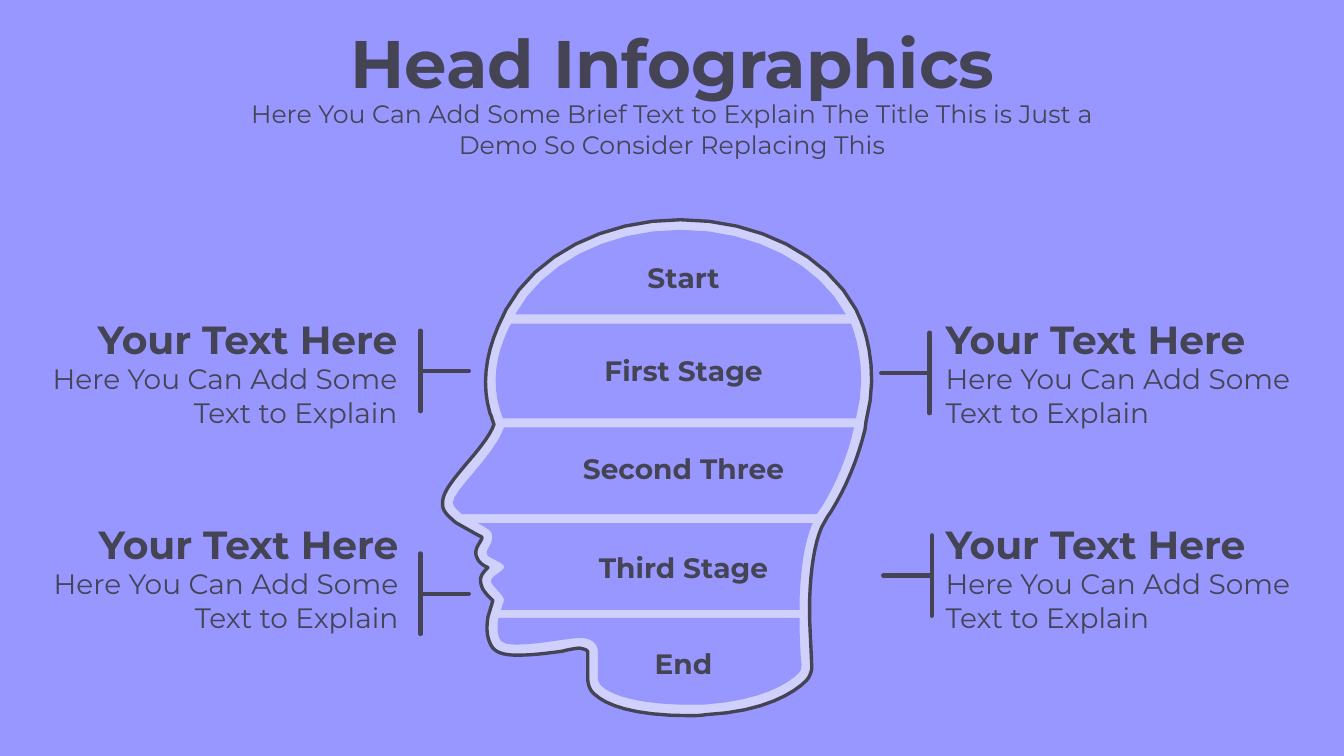
import pptx
import pptx.dml.color
import pptx.enum.shapes
import pptx.enum.text
import pptx.oxml.ns
import pptx.util
from lxml import etree

PERIWINKLE = pptx.dml.color.RGBColor(0x97, 0x97, 0xFF)
LAVENDER = pptx.dml.color.RGBColor(0xD0, 0xD0, 0xFC)
SLATE = pptx.dml.color.RGBColor(0x44, 0x44, 0x54)
FONT = "Montserrat"
LEFT = pptx.enum.text.PP_ALIGN.LEFT
CENTER = pptx.enum.text.PP_ALIGN.CENTER
RIGHT = pptx.enum.text.PP_ALIGN.RIGHT

COLUMNS, ROWS = 13.33, 7.5
CELL = pptx.util.Inches(1)
CURVE_STEPS = 8

# Outlines: a start point, then line ends (x, y) or cubic curves (x1, y1, x2, y2, x, y)
HEAD = [
    (6.84, 7.1), (6.27, 7.1, 6.01, 6.99, 5.9, 6.89), (5.85, 6.85, 5.83, 6.79, 5.83, 6.73),
    (5.83, 6.47), (5.83, 6.45, 5.8, 6.44, 5.75, 6.43), (5.73, 6.43, 5.65, 6.44, 5.58, 6.46),
    (5.44, 6.48, 5.27, 6.5, 5.13, 6.5), (5.05, 6.5, 4.94, 6.49, 4.89, 6.43),
    (4.83, 6.35, 4.82, 6.25, 4.84, 6.12), (4.87, 6.02), (4.88, 6, 4.88, 5.97, 4.89, 5.96),
    (4.88, 5.95, 4.86, 5.93, 4.85, 5.92), (4.81, 5.88, 4.78, 5.84, 4.77, 5.79),
    (4.75, 5.72, 4.8, 5.67, 4.84, 5.63), (4.79, 5.61, 4.75, 5.58, 4.73, 5.53),
    (4.7, 5.47, 4.74, 5.41, 4.76, 5.38), (4.77, 5.36, 4.78, 5.35, 4.78, 5.33),
    (4.77, 5.32, 4.74, 5.31, 4.69, 5.28), (4.53, 5.19),
    (4.5, 5.17, 4.47, 5.14, 4.44, 5.11), (4.41, 5.08, 4.39, 5.04, 4.39, 5.01),
    (4.38, 4.91, 4.45, 4.81, 4.61, 4.62), (4.72, 4.49, 4.86, 4.33, 4.9, 4.21),
    (4.89, 4.19, 4.89, 4.17, 4.88, 4.16), (4.88, 4.14, 4.87, 4.12, 4.86, 4.1),
    (4.78, 3.83, 4.81, 3.54, 4.94, 3.24), (5.02, 3.07),
    (5.31, 2.53, 5.99, 2.18, 6.75, 2.18), (7.52, 2.18, 8.2, 2.53, 8.49, 3.07),
    (8.53, 3.16), (8.54, 3.18, 8.74, 3.62, 8.59, 4.18), (8.58, 4.26),
    (8.51, 4.55, 8.39, 4.84, 8.24, 5.08), (8.22, 5.11, 8.21, 5.12, 8.2, 5.14),
    (8.15, 5.23), (8.08, 5.39, 8.04, 5.64, 8.03, 5.96), (8.03, 6.13),
    (8.04, 6.37, 8.05, 6.55, 8.05, 6.58), (8.06, 6.64, 8.04, 6.7, 8, 6.75),
    (7.88, 6.87, 7.59, 7.06, 7, 7.09), (6.94, 7.1, 6.89, 7.1, 6.84, 7.1),
]

# Label, top of the label, outline of the band
STAGES = [
    ("Start", 2.54, [
        (8.39, 3.12), (5.11, 3.12), (5.37, 2.63, 6.01, 2.28, 6.75, 2.28),
        (7.5, 2.28, 8.13, 2.63, 8.39, 3.12)]),
    ("First Stage", 3.46, [
        (8.49, 4.15), (4.99, 4.15), (4.98, 4.13, 4.97, 4.1, 4.96, 4.07),
        (4.87, 3.78, 4.93, 3.51, 5.03, 3.29), (5.07, 3.21), (8.44, 3.21),
        (8.44, 3.21, 8.63, 3.63, 8.49, 4.15)]),
    ("Second Three", 4.43, [
        (8.47, 4.24), (8.41, 4.53, 8.28, 4.82, 8.15, 5.03), (8.1, 5.1), (4.58, 5.1),
        (4.56, 5.08, 4.53, 5.06, 4.52, 5.04), (4.5, 5.03, 4.5, 5.01, 4.49, 4.99),
        (4.48, 4.88, 4.91, 4.51, 5, 4.24)]),
    ("Third Stage", 5.41, [
        (8.06, 5.19), (7.97, 5.39, 7.94, 5.68, 7.93, 5.96), (7.93, 6.05), (4.97, 6.05),
        (4.98, 6.01, 4.99, 5.98, 5, 5.96), (5, 5.9, 4.88, 5.82, 4.87, 5.77),
        (4.86, 5.72, 4.99, 5.67, 5, 5.63), (5.01, 5.58, 4.84, 5.54, 4.83, 5.5),
        (4.81, 5.45, 4.9, 5.39, 4.88, 5.3), (4.87, 5.26, 4.81, 5.23, 4.74, 5.19)]),
    ("End", 6.36, [
        (4.95, 6.13), (7.93, 6.13), (7.93, 6.34, 7.94, 6.52, 7.95, 6.59),
        (7.95, 6.63, 7.94, 6.66, 7.92, 6.68), (7.83, 6.77, 7.57, 6.95, 6.99, 6.99),
        (6.3, 7.01, 6.05, 6.88, 5.97, 6.81), (5.95, 6.79, 5.93, 6.76, 5.93, 6.73),
        (5.93, 6.47), (5.93, 6.38, 5.86, 6.33, 5.76, 6.33),
        (5.65, 6.32, 5.05, 6.46, 4.97, 6.36), (4.93, 6.31, 4.93, 6.22, 4.94, 6.14)]),
]

# Text left and top, alignment, bracket x and y, direction of its stem
CALLOUTS = [
    (0.17, 3.08, RIGHT, 4.17, 3.68, 1),
    (9.28, 3.08, LEFT, 9.22, 3.7, -1),
    (0.18, 5.11, RIGHT, 4.17, 5.89, 1),
    (9.28, 5.11, LEFT, 9.24, 5.71, -1),
]


def grid(*cells):
    return [round(n * CELL) for n in cells]


def add_text(shapes, text, box, size, align, bold=False):
    s = shapes.add_textbox(*grid(*box))
    tf = s.text_frame
    tf.word_wrap = True
    tf.auto_size = pptx.enum.text.MSO_AUTO_SIZE.SHAPE_TO_FIT_TEXT
    tf.text = text
    p = tf.paragraphs[0]
    p.alignment = align
    r = p.runs[0]
    r.font.name = FONT
    r.font.size = pptx.util.Pt(size)
    r.font.bold = bold
    r.font.color.rgb = SLATE


def flatten(outline):
    """Turn lines and cubic curves into one list of points."""
    points = [outline[0]]
    for segment in outline[1:]:
        if len(segment) == 2:
            points.append(segment)
            continue
        x0, y0 = points[-1]
        x1, y1, x2, y2, x3, y3 = segment
        for step in range(1, CURVE_STEPS + 1):
            t = step / CURVE_STEPS
            a, b, c, d = (1 - t) ** 3, 3 * t * (1 - t) ** 2, 3 * t * t * (1 - t), t ** 3
            points.append((a * x0 + b * x1 + c * x2 + d * x3,
                           a * y0 + b * y1 + c * y2 + d * y3))
    return points


def add_outline(shapes, outline, fill, line=None):
    points = [grid(*point) for point in flatten(outline)]
    builder = shapes.build_freeform(*points[0])
    builder.add_line_segments(points[1:], close=True)
    s = builder.convert_to_shape()
    s.shadow.inherit = False
    s.fill.solid()
    s.fill.fore_color.rgb = fill
    if line is None:
        s.line.fill.background()
    else:
        s.line.color.rgb = line
        s.line.width = pptx.util.Pt(2.4)


def add_head(shapes):
    group = shapes.add_group_shape().shapes
    add_outline(group, HEAD, LAVENDER, SLATE)
    for label, top, band in STAGES:
        add_outline(group, band, PERIWINKLE)
        add_text(group, label, (5.65, top, 2.26, 0.44), 20, CENTER, bold=True)


def add_bracket(shapes, x, y, direction):
    for end in ((x + 0.48 * direction, y), (x, y - 0.4), (x, y + 0.4)):
        s = shapes.add_connector(pptx.enum.shapes.MSO_CONNECTOR.STRAIGHT, *grid(x, y, *end))
        s.line.color.rgb = SLATE
        s.line.width = pptx.util.Pt(3)
        s.line._get_or_add_ln().set("cap", "rnd")
        etree.SubElement(s._element.spPr, pptx.oxml.ns.qn("a:effectLst"))


def add_callout(shapes, left, top, align):
    group = shapes.add_group_shape().shapes
    add_text(group, "Your Text Here", (left, top, 3.87, 0.57), 28, align, bold=True)
    add_text(group, "Here You Can Add Some Text to Explain",
             (left, top + 0.46, 3.87, 0.77), 20, align)


def main():
    prs = pptx.Presentation()
    prs.slide_width, prs.slide_height = grid(COLUMNS, ROWS)
    slide = prs.slides.add_slide(prs.slide_layouts[6])
    slide.background.fill.solid()
    slide.background.fill.fore_color.rgb = PERIWINKLE
    shapes = slide.shapes

    add_text(shapes, "Head Infographics", (2.78, 0.16, 7.78, 0.91), 48, CENTER, bold=True)
    add_text(shapes, "Here You Can Add Some Brief Text to Explain The Title This is Just a "
             "Demo So Consider Replacing This", (2.3, 0.93, 8.73, 0.71), 18, CENTER)
    add_head(shapes)
    for left, top, align, x, y, direction in CALLOUTS:
        add_callout(shapes, left, top, align)
        add_bracket(shapes, x, y, direction)
    prs.save("out.pptx")


if __name__ == "__main__":
    main()
